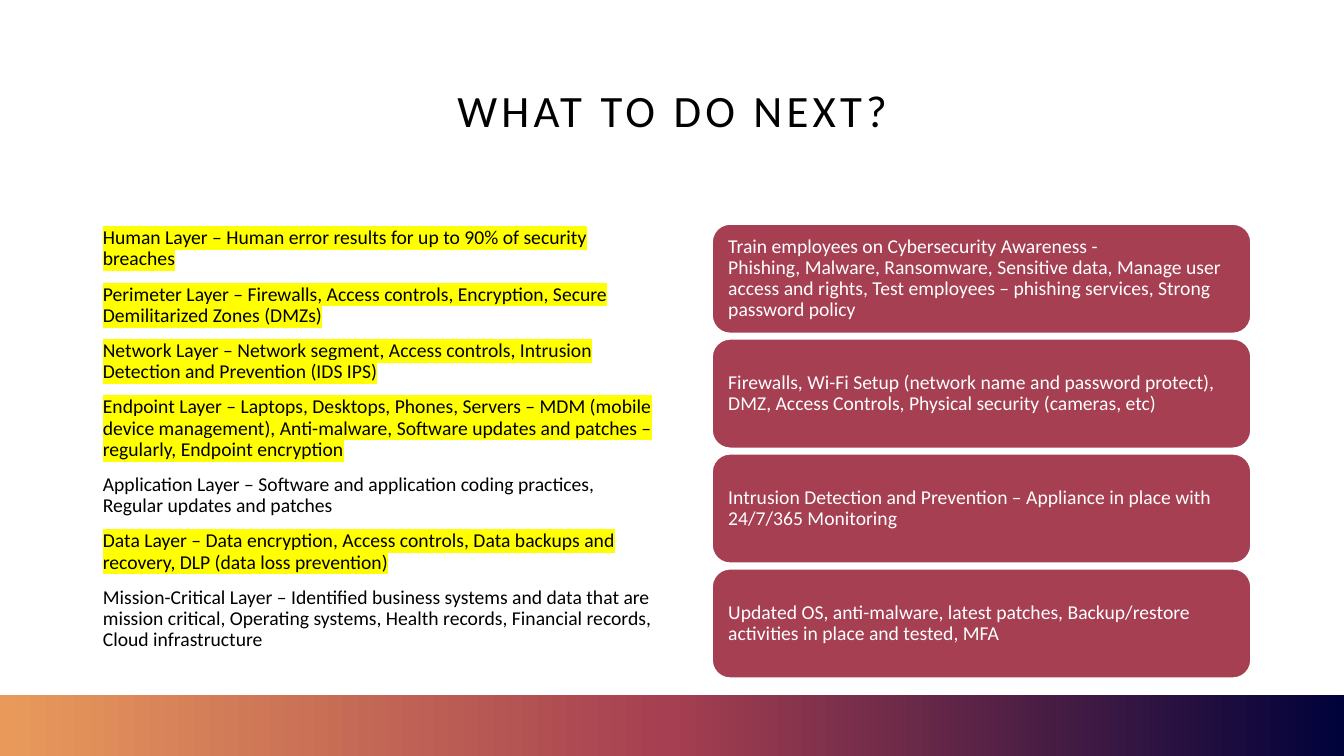
from copy import deepcopy
from dataclasses import dataclass

from lxml import etree
from pptx import Presentation
from pptx.dml.color import RGBColor
from pptx.enum.shapes import MSO_SHAPE
from pptx.enum.text import MSO_ANCHOR, MSO_AUTO_SIZE, PP_ALIGN
from pptx.oxml.ns import qn
from pptx.util import Inches, Pt

RECTANGLE = MSO_SHAPE.RECTANGLE
ROUNDED = MSO_SHAPE.ROUNDED_RECTANGLE
MIDDLE, TOP = MSO_ANCHOR.MIDDLE, MSO_ANCHOR.TOP
LEFT, CENTER = PP_ALIGN.LEFT, PP_ALIGN.CENTER
NO_AUTOFIT = MSO_AUTO_SIZE.NONE


@dataclass(frozen=True)
class Theme:
    font: str = "Calibri"
    title_size: int = 32
    text_size: int = 14
    title_spacing: int = 300
    ink: str = "000000"
    paper: str = "FFFFFF"
    accent: str = "A53F51"
    navy: str = "00023A"
    orange: str = "E99A5B"
    marker: str = "FFFF00"


THEME = Theme()

LAYERS = [
    ("Human Layer – Human error results for up to 90% of security breaches", True),
    ("Perimeter Layer – Firewalls, Access controls, Encryption, Secure "
     "Demilitarized Zones (DMZs)", True),
    ("Network Layer – Network segment, Access controls, Intrusion Detection "
     "and Prevention (IDS IPS)", True),
    ("Endpoint Layer – Laptops, Desktops, Phones, Servers – MDM (mobile device "
     "management), Anti-malware, Software updates and patches – regularly, "
     "Endpoint encryption", True),
    ("Application Layer – Software and application coding practices, Regular "
     "updates and patches", False),
    ("Data Layer – Data encryption, Access controls, Data backups and recovery, "
     "DLP (data loss prevention)", True),
    ("Mission-Critical Layer – Identified business systems and data that are "
     "mission critical, Operating systems, Health records, Financial records, "
     "Cloud infrastructure", False),
]

ACTIONS = [
    "Train employees on Cybersecurity Awareness - \nPhishing, Malware, Ransomware, "
    "Sensitive data, Manage user access and rights, Test employees – phishing "
    "services, Strong password policy",
    "Firewalls, Wi-Fi Setup (network name and password protect), DMZ, Access "
    "Controls, Physical security (cameras, etc)",
    "Intrusion Detection and Prevention – Appliance in place with 24/7/365 Monitoring",
    "Updated OS, anti-malware, latest patches, Backup/restore activities in place "
    "and tested, MFA",
]


def rgb(value):
    return RGBColor.from_string(value)


def apply(target, formats):
    for attribute, value in formats.items():
        setattr(target, attribute, value)


def place(placeholder, left, top, width, height):
    apply(placeholder, {"left": Inches(left), "top": Inches(top),
                        "width": Inches(width), "height": Inches(height)})


def write(paragraph, text, size, color, align=LEFT, before=0):
    paragraph.text = text
    apply(paragraph, {"alignment": align, "line_spacing": 0.9,
                      "space_before": Pt(before)})
    for run in paragraph.runs:
        apply(run.font, {"name": THEME.font, "size": Pt(size)})
        run.font.color.rgb = rgb(color)


def highlight(paragraph):
    for run in paragraph.runs:
        marker = etree.Element(qn("a:highlight"))
        etree.SubElement(marker, qn("a:srgbClr"), val=THEME.marker)
        run.font._element.find(qn("a:solidFill")).addnext(marker)


def remove_bullet(paragraph):
    properties = paragraph._p.get_or_add_pPr()
    properties.set("marL", "0")
    properties.set("indent", "0")
    etree.SubElement(properties, qn("a:buNone"))


def add_title(slide, text):
    title = slide.shapes.title
    place(title, 0.92, 0.4, 11.5, 1.45)
    frame = title.text_frame
    apply(frame, {"auto_size": NO_AUTOFIT, "vertical_anchor": MIDDLE})
    heading = frame.paragraphs[0]
    write(heading, text, THEME.title_size, THEME.ink, CENTER)
    heading.runs[0].font._element.set("spc", str(THEME.title_spacing))


def add_layers(slide, layers):
    body = slide.placeholders[1]
    place(body, 0.92, 2.21, 5.7, 4.52)
    frame = body.text_frame
    apply(frame, {"auto_size": NO_AUTOFIT, "vertical_anchor": TOP, "word_wrap": True})
    for index, (text, marked) in enumerate(layers):
        layer = frame.add_paragraph() if index else frame.paragraphs[0]
        write(layer, text, THEME.text_size, THEME.ink, before=10)
        remove_bullet(layer)
        if marked:
            highlight(layer)


def add_gradient_bar(slide):
    bar = slide.shapes.add_shape(RECTANGLE, 0, Inches(6.89), Inches(13.33), Inches(0.61))
    bar.shadow.inherit = False
    bar.line.fill.background()
    bar.fill.gradient()
    bar.fill.gradient_angle = 180
    first_stop = bar._element.spPr.find(".//" + qn("a:gs"))
    first_stop.addnext(deepcopy(first_stop))
    colors = (THEME.navy, THEME.accent, THEME.orange)
    for index, (stop, color) in enumerate(zip(bar.fill.gradient_stops, colors)):
        stop.position = index / 2
        stop.color.rgb = rgb(color)


def add_action(slide, top, text):
    card = slide.shapes.add_shape(ROUNDED, Inches(7.06), Inches(top),
                                  Inches(5.35), Inches(1.09))
    card.shadow.inherit = False
    card.fill.solid()
    card.fill.fore_color.rgb = rgb(THEME.accent)
    card.line.color.rgb = rgb(THEME.paper)
    card.line.width = Pt(1.5)
    inset = Inches(0.11)
    apply(card.text_frame, {"word_wrap": True, "vertical_anchor": MIDDLE,
                            "margin_left": inset, "margin_right": inset,
                            "margin_top": 0, "margin_bottom": 0})
    write(card.text_frame.paragraphs[0], text, THEME.text_size, THEME.paper)


def main():
    presentation = Presentation()
    apply(presentation, {"slide_width": Inches(13.33), "slide_height": Inches(7.5)})
    slide = presentation.slides.add_slide(presentation.slide_layouts[1])
    add_title(slide, "WHAT TO DO NEXT?")
    add_layers(slide, LAYERS)
    add_gradient_bar(slide)
    for row, text in enumerate(ACTIONS):
        add_action(slide, 2.22 + row * 1.14, text)
    presentation.save("out.pptx")


if __name__ == "__main__":
    main()
